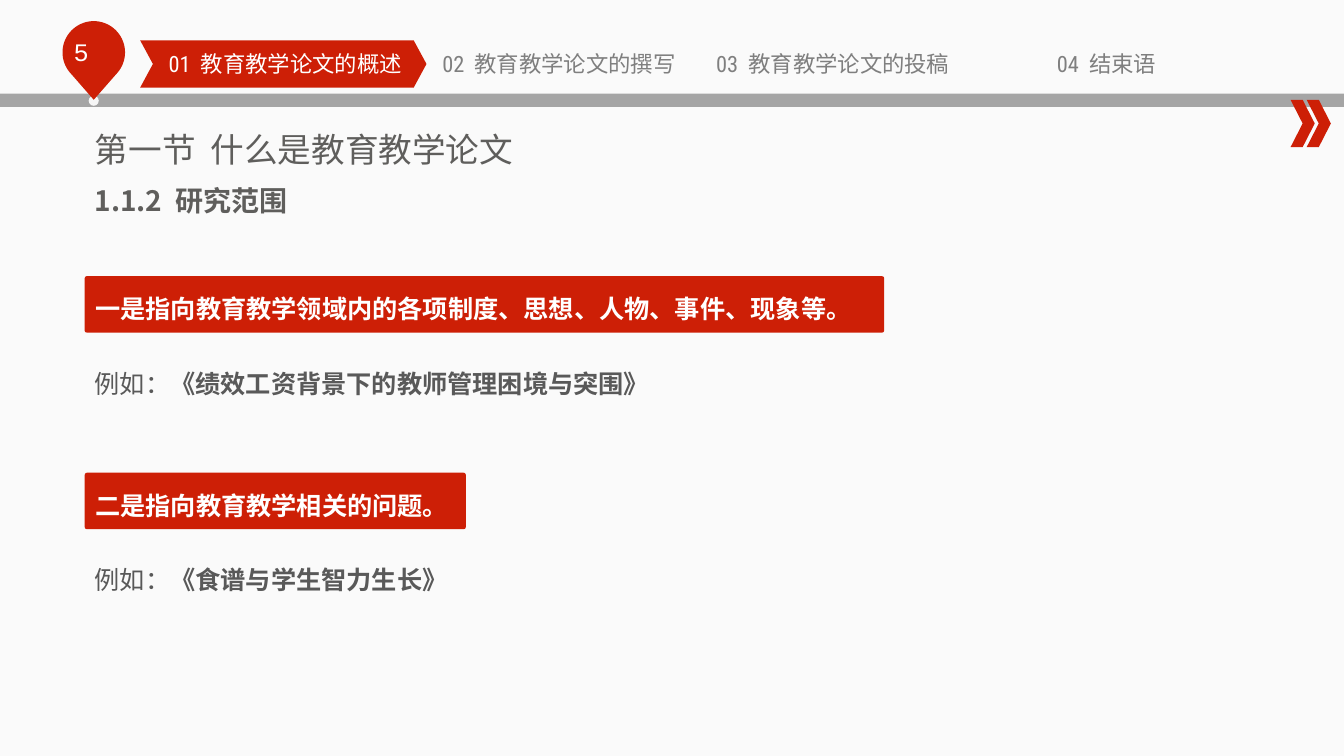
from math import cos, sin, radians
from pptx import Presentation
from pptx.dml.color import RGBColor
from pptx.enum.shapes import MSO_SHAPE
from pptx.enum.text import MSO_ANCHOR, PP_ALIGN
from pptx.oxml.ns import qn
from pptx.util import Inches, Pt
from lxml.etree import SubElement

HEAD = "第一节  什么是教育教学论文"
SUB = "1.1.2  研究范围"
PAGE = "5"
TABS = [
    "01  教育教学论文的概述",
    "02  教育教学论文的撰写",
    "03  教育教学论文的投稿",
    "04  结束语",
]
POINTS = [  # claim, banner width, example
    ("一是指向教育教学领域内的各项制度、思想、人物、事件、现象等。", 7.93,
     "《绩效工资背景下的教师管理困境与突围》"),
    ("二是指向教育教学相关的问题。", 3.78, "《食谱与学生智力生长》"),
]
LEAD = "例如："

COLORS = {
    "red": "CD1F06", "bar": "A5A5A5", "dot": "F6F6F6", "white": "FFFFFF",
    "tab": "7F7F7F", "head": "5F5E5C", "body": "595959",
    "top": "FAFAFA", "base": "FCFCFC",
}
SANS, NARROW, MONO = "Noto Sans CJK SC", "Roboto Condensed", "Courier New"
LEFT = 0.84


def rgb(name):
    return RGBColor.from_string(COLORS[name])


def paint(shape, color):
    shape.shadow.inherit = False
    shape.fill.solid()
    shape.fill.fore_color.rgb = rgb(color)
    shape.line.fill.background()
    return shape


def draw(kind, box, color, adj=None):
    shape = shapes.add_shape(kind, *map(Inches, box))
    if adj is not None:
        shape.adjustments[0] = adj
    return paint(shape, color)


def write(shape, runs, font, size, color, frame=(), para=()):
    """Fill one paragraph with (text, bold) runs."""
    text = shape.text_frame
    line = text.paragraphs[0]
    looks = {"word_wrap": True, "vertical_anchor": MSO_ANCHOR.TOP, **dict(frame)}
    for name, value in looks.items():
        setattr(text, name, value)
    for name, value in {"alignment": PP_ALIGN.LEFT, **dict(para)}.items():
        setattr(line, name, value)
    for words, bold in runs:
        run = line.add_run()
        run.text = words
        for name, value in {"name": font, "size": Pt(size), "bold": bold}.items():
            setattr(run.font, name, value)
        run.font.color.rgb = rgb(color)
        SubElement(run.font._element, qn("a:ea")).set("typeface", font)


def text_box(box):
    return shapes.add_textbox(*map(Inches, box))


def draw_pin(x, y, r, tip):
    """Draw a round head whose lower sides meet at the tip."""
    arc = [(x + r * cos(radians(a)), y + r * sin(radians(a)))
           for a in range(45, -226, -5)]
    start, *rest = [(Inches(px), Inches(py)) for px, py in arc + [(x, tip)]]
    path = shapes.build_freeform(*start)
    path.add_line_segments(rest, close=True)
    paint(path.convert_to_shape(), "red")


deck = Presentation()
deck.slide_width, deck.slide_height = Inches(13.33), Inches(7.5)
slide = deck.slides.add_slide(deck.slide_layouts[5])
shapes = slide.shapes

back = slide.background.fill
back.gradient()
back.gradient_angle = 270
for stop, name in zip(back.gradient_stops, ("top", "base")):
    stop.color.rgb = rgb(name)

# Header band and page pin
draw(MSO_SHAPE.RECTANGLE, (0, 0.93, 13.33, 0.13), "bar")
for i in range(2):
    draw(MSO_SHAPE.CHEVRON, (12.8 + 0.16 * i, 0.99, 0.24, 0.47), "red", 0.5)
draw(MSO_SHAPE.OVAL, (0.88, 0.95, 0.1, 0.1), "dot")
draw_pin(0.93, 0.52, 0.31, 0.99)
center = {"alignment": PP_ALIGN.CENTER}
write(text_box((0.37, 0.31, 0.87, 0.4)), [(PAGE, False)], MONO, 18, "white",
      para=center)

# Chapter tabs
draw(MSO_SHAPE.CHEVRON, (1.39, 0.4, 2.84, 0.47), "red", 0.27)
sides = ("margin_left", "margin_top", "margin_right", "margin_bottom")
tight = {**dict.fromkeys(sides, 0), "vertical_anchor": MSO_ANCHOR.MIDDLE}
for i, tab in enumerate(TABS):
    write(text_box((1.59 + 2.715 * i, 0.49, 2.48, 0.29)), [(tab, False)],
          NARROW, 16, "tab" if i else "white", tight, center)

# Headings
title = shapes.title
for name, value in zip(("left", "top", "width", "height"), (LEFT, 1.23, 5.43, 0.5)):
    setattr(title, name, Inches(value))
write(title, [(HEAD, False)], SANS, 24, "head")
loose = {"line_spacing": 1.3}
write(text_box((LEFT, 1.67, 5.77, 0.53)), [(SUB, True)], SANS, 20, "head", para=loose)

# Claims, each with its example
for i, (claim, width, sample) in enumerate(POINTS):
    top = 2.74 + 1.95 * i
    banner = draw(MSO_SHAPE.ROUNDED_RECTANGLE, (LEFT, top, width, 0.56), "red", 0.04)
    write(banner, [(claim, True)], SANS, 18, "white",
          {"vertical_anchor": MSO_ANCHOR.MIDDLE}, loose)
    write(text_box((LEFT, top + 0.77, 12.13, 0.49)), [(LEAD, False), (sample, True)],
          SANS, 18, "body", para={**loose, "space_after": Pt(3)})

deck.save("out.pptx")
